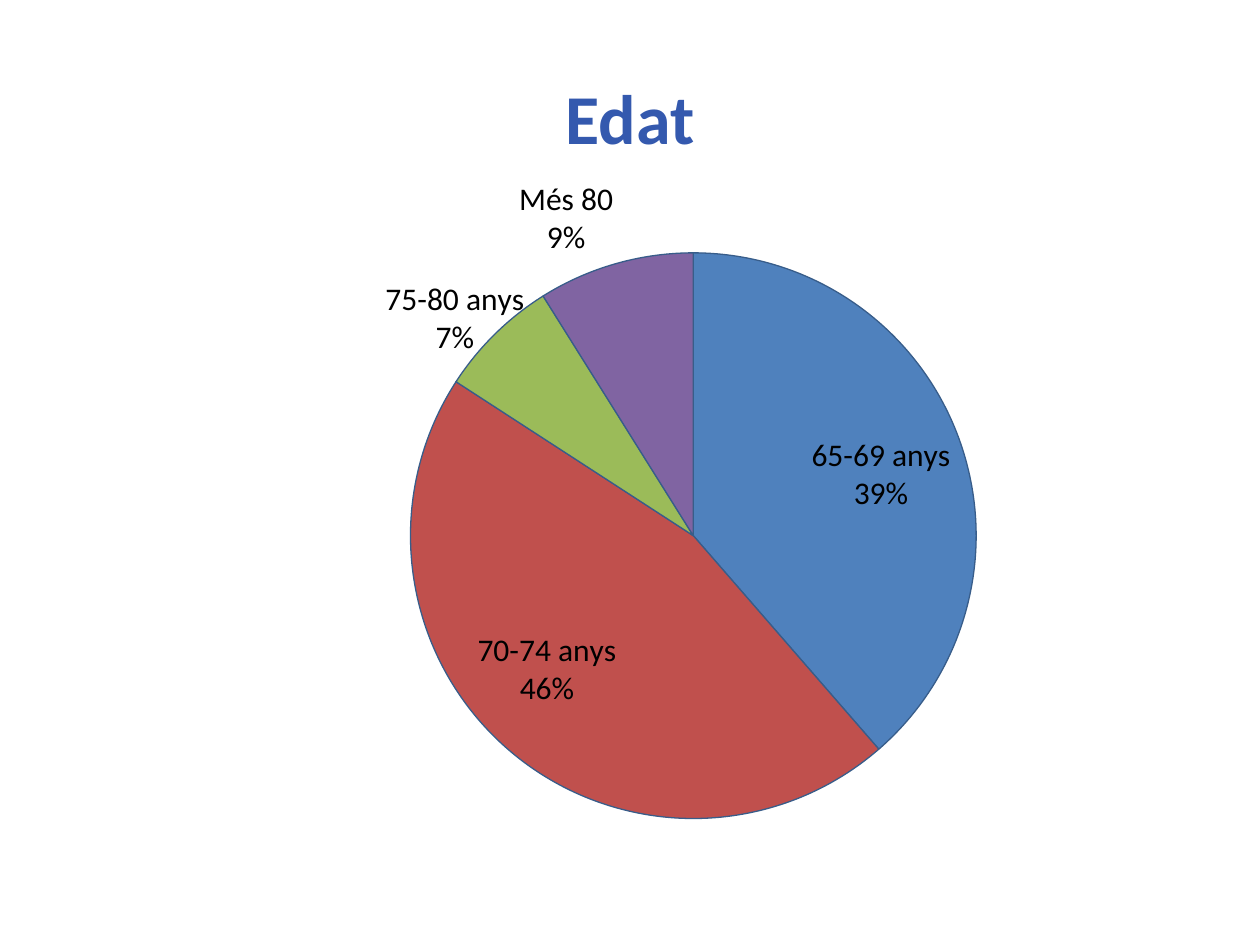
from dataclasses import dataclass
from lxml.etree import SubElement
from pptx import Presentation
from pptx.chart.data import CategoryChartData
from pptx.chart.series import PieSeries
from pptx.dml.color import RGBColor
from pptx.enum.chart import XL_CHART_TYPE, XL_LABEL_POSITION
from pptx.enum.text import MSO_ANCHOR, PP_ALIGN
from pptx.oxml import parse_xml
from pptx.oxml.ns import nsdecls, qn
from pptx.util import Inches, Pt


@dataclass(frozen=True)
class Theme:
    font: str = "Calibri"
    title: RGBColor = RGBColor(0x34, 0x59, 0xAE)
    label: RGBColor = RGBColor(0, 0, 0)
    outline: RGBColor = RGBColor(0x38, 0x5D, 0x8A)
    title_size: int = 40
    label_size: int = 18


@dataclass(frozen=True)
class Slice:
    name: str
    percent: int
    color: str


THEME = Theme()
SLICES = [
    Slice("65-69 anys", 39, "4F81BD"),
    Slice("70-74 anys", 46, "C0504D"),
    Slice("75-80 anys", 7, "9BBB59"),
    Slice("Més 80", 9, "8064A2"),
]
MOVED_SLICE = 2


def format_font(font, size: int, color: RGBColor, bold: bool) -> None:
    for name, value in {"name": THEME.font, "size": Pt(size), "bold": bold}.items():
        setattr(font, name, value)
    font.color.rgb = color


def manual_layout(**values):
    """Layout element; its children follow the order of the arguments."""
    layout = parse_xml(f"<c:layout {nsdecls('c')}><c:manualLayout/></c:layout>")
    for tag, value in values.items():
        SubElement(layout[0], qn(f"c:{tag}")).set("val", str(value))
    return layout


def show_category_and_percent(element) -> None:
    """Make a label show its category above its percentage."""
    for tag, value in {"showVal": 0, "showCatName": 1, "showPercent": 1}.items():
        element.find(qn(f"c:{tag}")).set("val", str(value))
    separator = parse_xml(f"<c:separator {nsdecls('c')}>\n</c:separator>")
    element.find(qn("c:showBubbleSize")).addnext(separator)


def add_labels(series: PieSeries) -> None:
    labels = series.data_labels
    labels.number_format, labels.number_format_is_linked = "0%", False
    labels.position = XL_LABEL_POSITION.BEST_FIT
    format_font(labels.font, THEME.label_size, THEME.label, False)
    show_category_and_percent(labels._element)

    # One label is pulled in towards its slice
    moved = series.points[MOVED_SLICE].data_label
    format_font(moved.font, THEME.label_size, THEME.label, False)
    moved.position = XL_LABEL_POSITION.BEST_FIT
    element = labels._element.find(qn("c:dLbl"))
    show_category_and_percent(element)
    element.find(qn("c:idx")).addnext(manual_layout(x=0.03, y=0.04))


def add_pie(slide) -> None:
    data = CategoryChartData()
    data.categories = [s.name for s in SLICES]
    data.add_series("Series 1", [s.percent for s in SLICES])
    chart = slide.shapes.add_chart(
        XL_CHART_TYPE.PIE, Inches(0.5), Inches(1.25), Inches(9.18), Inches(5.41), data
    ).chart
    chart.has_legend = chart.has_title = False
    format_font(chart.font, THEME.label_size, THEME.label, False)
    plot = chart.plots[0]
    plot.vary_by_categories = True

    # Slices
    series = plot.series[0]
    for i, s in enumerate(SLICES):
        fmt = series.points[i].format
        fmt.fill.solid()
        fmt.fill.fore_color.rgb = RGBColor.from_string(s.color)
        fmt.line.color.rgb = THEME.outline
        fmt.line.width = Pt(0.75)
    add_labels(series)

    # Place of the pie inside the chart frame
    area = plot._element.getparent()
    for old in area.findall(qn("c:layout")):
        area.remove(old)
    area.insert(0, manual_layout(layoutTarget="inner", xMode="edge", yMode="edge",
                                 x=0.3, y=0.14, w=0.49, h=0.83))


def add_title(slide, text: str) -> None:
    title = slide.shapes.title
    frame = {"left": 0.5, "top": 0.3, "width": 9, "height": 1.25}
    for name, value in frame.items():
        setattr(title, name, Inches(value))
    tf = title.text_frame
    tf.vertical_anchor = MSO_ANCHOR.MIDDLE
    p = tf.paragraphs[0]
    p.alignment = PP_ALIGN.CENTER
    r = p.add_run()
    r.text = text
    format_font(r.font, THEME.title_size, THEME.title, True)


def main() -> None:
    prs = Presentation()
    prs.slide_width, prs.slide_height = Inches(10), Inches(7.5)
    slide = prs.slides.add_slide(prs.slide_layouts[5])
    add_title(slide, "Edat")
    add_pie(slide)
    prs.save("out.pptx")


if __name__ == "__main__":
    main()
